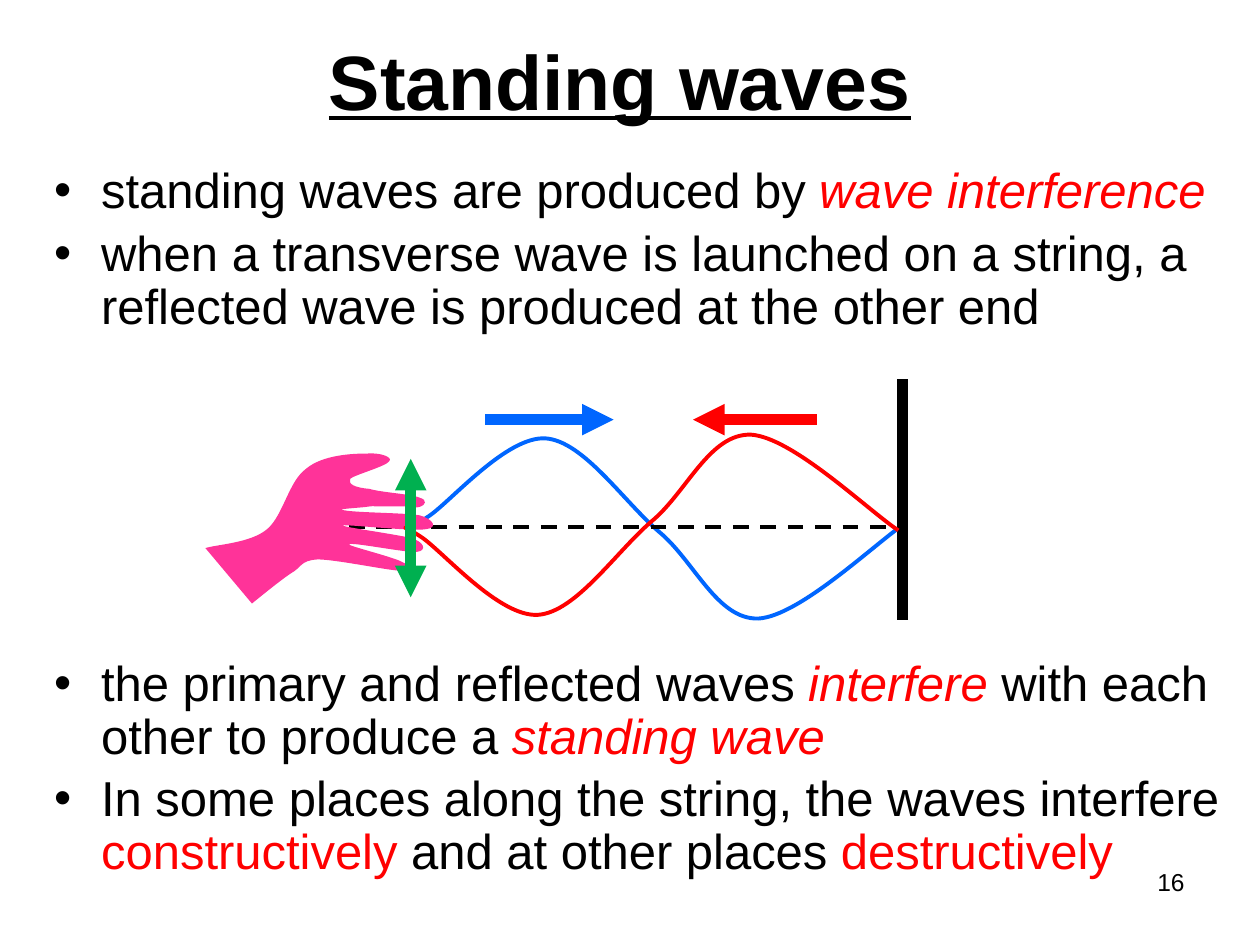
import lxml.etree
import pptx
import pptx.dml.color
import pptx.enum.dml
import pptx.enum.shapes
import pptx.enum.text
import pptx.oxml.ns
import pptx.util

Cm = pptx.util.Cm
Pt = pptx.util.Pt
RGBColor = pptx.dml.color.RGBColor
qn = pptx.oxml.ns.qn
PP_ALIGN = pptx.enum.text.PP_ALIGN
ANCHOR = pptx.enum.text.MSO_ANCHOR

BLACK = RGBColor(0, 0, 0)
WHITE = RGBColor(255, 255, 255)
RED = RGBColor(255, 0, 0)
BLUE = RGBColor(0, 102, 255)
GREEN = RGBColor(0, 176, 80)
PINK = RGBColor(255, 51, 153)

FONT = "Arial"
CURVE_UNIT = Cm(0.0254)
MIRROR_SHIFT = -6
MIRROR_SUM = 836
BULLET_GAP = Pt(5.6)
DIAGRAM_GAP = Pt(185)

PRIMARY_WAVE = [
    (332, 414),
    (327, 417), (323, 421), (340, 410),
    (357, 399), (402, 346), (433, 348),
    (463, 350), (495, 398), (523, 422),
    (551, 445), (569, 492), (602, 491),
    (635, 489), (695, 431), (719, 415),
]
REFLECTED_WAVE = [(x + MIRROR_SHIFT, MIRROR_SUM - y) for x, y in PRIMARY_WAVE]

HAND = [
    (200, 479),
    (205, 475), (222, 461), (231, 455),
    (240, 450), (238, 445), (252, 444),
    (266, 444), (304, 452), (317, 453),
    (330, 454), (326, 449), (319, 446),
    (312, 442), (275, 433), (277, 432),
    (279, 430), (323, 439), (331, 438),
    (339, 437), (337, 430), (326, 427),
    (314, 424), (270, 418), (272, 417),
    (274, 416), (328, 422), (338, 420),
    (348, 419), (344, 412), (333, 409),
    (322, 407), (283, 407), (273, 405),
    (264, 404), (288, 403), (293, 402),
    (298, 401), (299, 403), (302, 402),
    (306, 402), (313, 402), (316, 402),
    (319, 402), (322, 402), (325, 402),
    (328, 403), (332, 403), (334, 402),
    (337, 401), (340, 397), (333, 395),
    (326, 392), (303, 391), (293, 388),
    (281, 387), (276, 384), (278, 380),
    (281, 377), (307, 370), (309, 366),
    (312, 363), (302, 359), (291, 360),
    (280, 360), (256, 361), (243, 372),
    (229, 382), (225, 409), (212, 420),
    (199, 431), (173, 432), (163, 435),
]

BULLETS = [
    (BULLET_GAP, [("standing waves are produced by ", {}),
                  ("wave interference", {"color": RED, "italic": True})]),
    (BULLET_GAP, [("when a transverse wave is launched on a string, "
                   "a reflected wave is produced at the other end", {})]),
    (DIAGRAM_GAP, [("the primary and reflected waves ", {}),
                   ("interfere", {"color": RED, "italic": True}),
                   (" with each other to produce a ", {}),
                   ("standing wave", {"color": RED, "italic": True})]),
    (BULLET_GAP, [("In some places along the string, the waves interfere ", {}),
                  ("constructively", {"color": RED}),
                  (" and at other places ", {}),
                  ("destructively", {"color": RED})]),
]


def add_text(paragraph, text, size=28, color=BLACK, bold=False, italic=False, underline=False):
    run = paragraph.add_run()
    run.text = text
    run.font.name = FONT
    run.font.size = Pt(size)
    run.font.color.rgb = color
    run.font.bold = bold
    run.font.italic = italic
    run.font.underline = underline


def add_text_frame(slide, left, top, width, height):
    frame = slide.shapes.add_textbox(Cm(left), Cm(top), Cm(width), Cm(height)).text_frame
    frame.word_wrap = True
    return frame


def set_title(slide):
    title = slide.shapes.title
    title.left, title.top, title.width, title.height = Cm(1.07), Cm(0.23), Cm(22.86), Cm(2.74)
    title.fill.solid()
    title.fill.fore_color.rgb = WHITE
    title.text_frame.vertical_anchor = ANCHOR.MIDDLE
    heading = title.text_frame.paragraphs[0]
    heading.alignment = PP_ALIGN.CENTER
    add_text(heading, "Standing waves", size=44, bold=True, underline=True)


def format_bullet(paragraph, space_before):
    paragraph.line_spacing = 0.9
    paragraph.space_before = space_before
    properties = paragraph._p.get_or_add_pPr()
    properties.set("marL", str(Cm(0.95)))
    properties.set("indent", str(-Cm(0.95)))
    lxml.etree.SubElement(properties, qn("a:buFont"), typeface=FONT)
    lxml.etree.SubElement(properties, qn("a:buChar"), char="•")


def add_bullets(slide):
    frame = add_text_frame(slide, 0.84, 3.23, 24.1, 14.96)
    for index, (space_before, parts) in enumerate(BULLETS):
        paragraph = frame.add_paragraph() if index else frame.paragraphs[0]
        format_bullet(paragraph, space_before)
        for text, style in parts:
            add_text(paragraph, text, **style)


def add_curve(slide, points, closed=False):
    builder = slide.shapes.build_freeform(*points[0], scale=CURVE_UNIT)
    builder.add_line_segments(points[1:], close=closed)
    curve = builder.convert_to_shape()
    curve.shadow.inherit = False
    outline = curve._element.find(".//" + qn("a:path"))
    segments = outline.findall(qn("a:lnTo"))
    for start in range(0, len(points) - 1, 3):
        bezier = lxml.etree.Element(qn("a:cubicBezTo"))
        segments[start].addprevious(bezier)
        for segment in segments[start:start + 3]:
            bezier.append(segment[0])
            outline.remove(segment)
    return curve


def add_wave(slide, points, color):
    wave = add_curve(slide, points)
    wave.fill.background()
    wave.line.color.rgb = color
    wave.line.width = Pt(2.25)


def add_hand(slide):
    hand = add_curve(slide, HAND, closed=True)
    hand.fill.solid()
    hand.fill.fore_color.rgb = PINK
    hand.line.fill.background()


def add_line(slide, start, end, color, width=6, dashed=False, arrow_ends=()):
    line = slide.shapes.add_connector(
        pptx.enum.shapes.MSO_CONNECTOR.STRAIGHT,
        Cm(start[0]), Cm(start[1]), Cm(end[0]), Cm(end[1]))
    line.line.color.rgb = color
    line.line.width = Pt(width)
    if dashed:
        line.line.dash_style = pptx.enum.dml.MSO_LINE.DASH
    properties = line._element.spPr
    for arrow_end in arrow_ends:
        lxml.etree.SubElement(properties.get_or_add_ln(), qn("a:" + arrow_end), type="triangle")
    lxml.etree.SubElement(properties, qn("a:effectLst"))


def add_diagram(slide):
    add_wave(slide, PRIMARY_WAVE, BLUE)
    add_line(slide, (6.48, 10.62), (18.26, 10.62), BLACK, width=2.25, dashed=True)
    add_line(slide, (18.19, 7.65), (18.19, 12.5), BLACK)
    add_hand(slide)
    add_wave(slide, REFLECTED_WAVE, RED)
    add_line(slide, (8.28, 9.25), (8.28, 12.04), GREEN, arrow_ends=("headEnd", "tailEnd"))
    add_line(slide, (9.78, 8.46), (12.37, 8.46), BLUE, arrow_ends=("tailEnd",))
    add_line(slide, (16.46, 8.46), (13.97, 8.46), RED, arrow_ends=("tailEnd",))


def add_page_number(slide):
    number = add_text_frame(slide, 18.21, 17.35, 5.92, 1.32).paragraphs[0]
    number.alignment = PP_ALIGN.RIGHT
    add_text(number, "16", size=14)


def main():
    presentation = pptx.Presentation()
    presentation.slide_width, presentation.slide_height = Cm(25.4), Cm(19.05)
    slide = presentation.slides.add_slide(presentation.slide_layouts.get_by_name("Title Only"))
    set_title(slide)
    add_bullets(slide)
    add_diagram(slide)
    add_page_number(slide)
    presentation.save("out.pptx")


if __name__ == "__main__":
    main()
